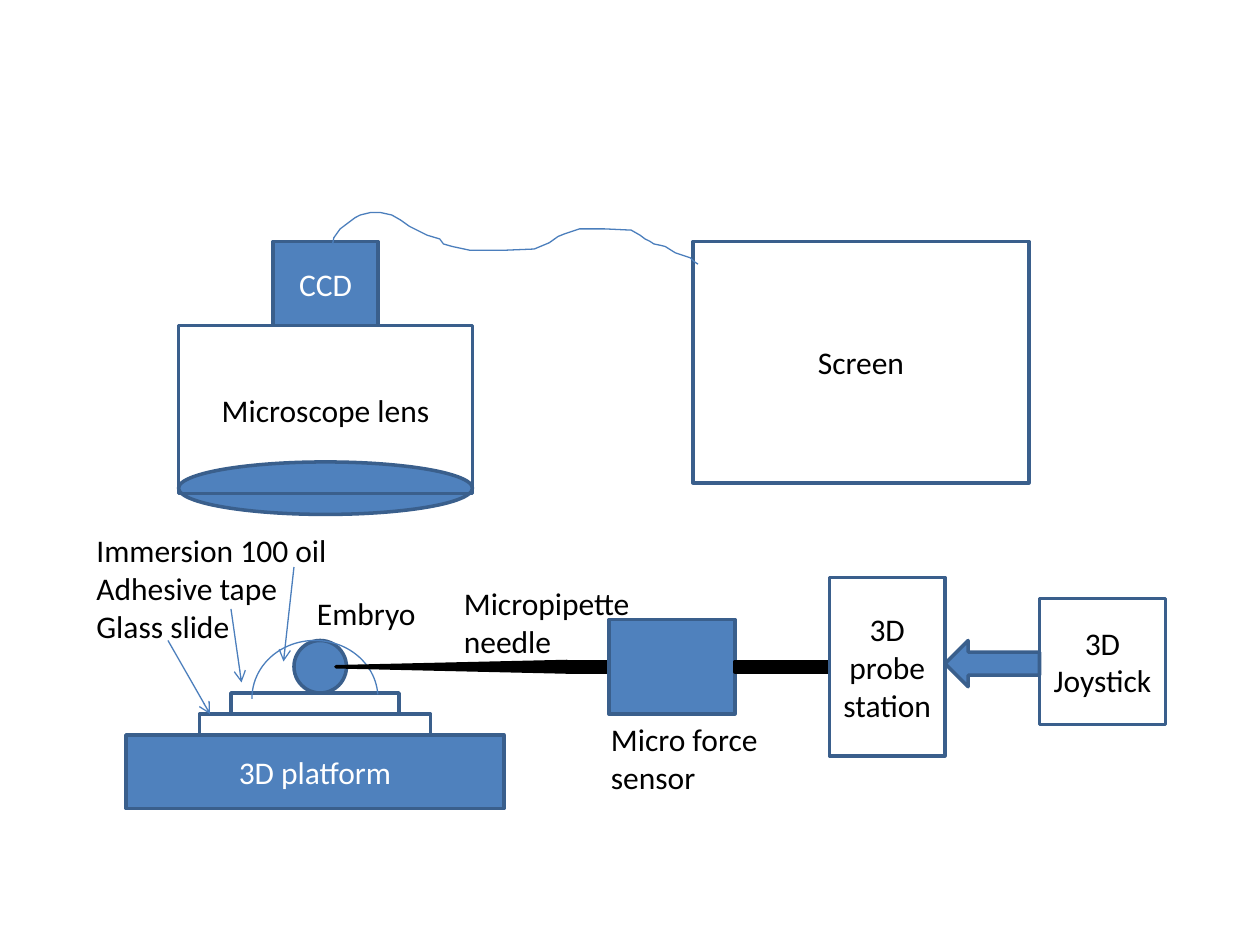
from lxml import etree
from pptx import Presentation
from pptx.dml.color import RGBColor
from pptx.enum.shapes import MSO_CONNECTOR, MSO_SHAPE
from pptx.enum.text import MSO_ANCHOR, MSO_AUTO_SIZE, PP_ALIGN
from pptx.oxml.ns import qn
from pptx.util import Inches, Pt

RECT, OVAL, ARC = MSO_SHAPE.RECTANGLE, MSO_SHAPE.OVAL, MSO_SHAPE.ARC
TRIANGLE, ARROW = MSO_SHAPE.ISOSCELES_TRIANGLE, MSO_SHAPE.RIGHT_ARROW
STRAIGHT = MSO_CONNECTOR.STRAIGHT
CENTER, MIDDLE, GROW = PP_ALIGN.CENTER, MSO_ANCHOR.MIDDLE, MSO_AUTO_SIZE.SHAPE_TO_FIT_TEXT
COLORS = {"blue": "4F81BD", "edge": "3A5F8C", "wire": "4B7EBC",
          "black": "000000", "white": "FFFFFF"}
FONT, SIZE = "Calibri", 18
CELL = Inches(1) / 12

CABLE = [(2.64, 1.94), (2.65, 1.89), (2.7, 1.82), (2.82, 1.73), (2.86, 1.71),
         (2.94, 1.69), (3.02, 1.69), (3.11, 1.71), (3.18, 1.75), (3.25, 1.8),
         (3.33, 1.84), (3.39, 1.87), (3.49, 1.9), (3.52, 1.94), (3.59, 1.96),
         (3.73, 1.99), (4.0, 1.99), (4.24, 1.98), (4.36, 1.93), (4.43, 1.88),
         (4.48, 1.86), (4.6, 1.82), (4.8, 1.82), (5.01, 1.83), (5.08, 1.87),
         (5.12, 1.9), (5.16, 1.92), (5.19, 1.94), (5.24, 1.95), (5.28, 1.96),
         (5.36, 2.01), (5.48, 2.05), (5.51, 2.08), (5.54, 2.1)]


def rgb(name):
    """Return the named colour."""
    return RGBColor.from_string(COLORS[name])


def grid(*cells):
    """Turn counts of grid cells into lengths."""
    return [round(c * CELL) for c in cells]


def style(sp, fill=None, line="edge", width=2):
    """Set the fill and outline of a shape."""
    sp.shadow.inherit = False
    if fill:
        sp.fill.solid()
        sp.fill.fore_color.rgb = rgb(fill)
    else:
        sp.fill.background()
    sp.line.color.rgb = rgb(line)
    sp.line.width = Pt(width)


def write(tf, text, color, align=None):
    """Write text and format its runs."""
    tf.text = text
    for p in tf.paragraphs:
        p.alignment = align
        for r in p.runs:
            r.font.name, r.font.size = FONT, Pt(SIZE)
            r.font.color.rgb = rgb(color)


def part(s, box, kind, col, row, w, h, text="", fill=None, line="edge", width=2):
    """Add a shape at a cell counted from the corner of the box."""
    sp = s.add_shape(kind, *grid(box[0] + col, box[1] + row, w, h))
    style(sp, fill, line, width)
    if text:
        sp.text_frame.vertical_anchor = MIDDLE
        write(sp.text_frame, text, "white" if fill else "black", CENTER)
    return sp


def label(s, box, col, row, w, h, text):
    """Add an unwrapped caption that fits its text."""
    tf = s.add_textbox(*grid(box[0] + col, box[1] + row, w, h)).text_frame
    tf.word_wrap = False
    tf.auto_size = GROW
    write(tf, text, "black")


def pointer(s, box, start, end):
    """Add a thin line with an open arrowhead at its end."""
    (x1, y1), (x2, y2) = start, end
    c = s.add_connector(STRAIGHT, *grid(box[0] + x1, box[1] + y1, box[0] + x2, box[1] + y2))
    c.line.color.rgb = rgb("wire")
    c.line.width = Pt(0.75)
    etree.SubElement(c.line._get_or_add_ln(), qn("a:tailEnd"), type="arrow")
    etree.SubElement(c._element.spPr, qn("a:effectLst"))


def stage(s, box):
    """Draw the platform, slide, tape and embryo under its oil drop."""
    part(s, box, RECT, 0, 9, 36, 7, "3D platform", "blue")
    part(s, box, RECT, 7, 7, 22, 2)
    part(s, box, RECT, 10, 5, 16, 2)
    part(s, box, OVAL, 16, 0, 5, 5, fill="blue")
    drop = part(s, box, ARC, 12, 0, 12, 11, line="wire", width=0.75)
    drop.adjustments[0], drop.adjustments[1] = 107.57, 213.88


def microscope(s, box):
    """Draw the lens body with the camera on top."""
    part(s, box, OVAL, 0, 21, 28, 5, fill="blue")
    part(s, box, RECT, 0, 8, 28, 16, "Microscope lens")
    part(s, box, RECT, 9, 0, 10, 8, "CCD", "blue")


def injector(s, box):
    """Draw the needle, force sensor, probe station and joystick."""
    needle = part(s, box, TRIANGLE, 10.5, -2.5, 1, 22, fill="black", line="black")
    needle.rotation = 270
    part(s, box, RECT, 22, 8, 4, 1, fill="black", line="black")
    part(s, box, RECT, 26, 4, 12, 9, fill="blue")
    part(s, box, RECT, 38, 8, 9, 1, fill="black", line="black")
    part(s, box, RECT, 47, 0, 11, 17, "3D probe station")
    part(s, box, ARROW, 58, 6, 9, 4.4, fill="blue").rotation = 180
    part(s, box, RECT, 67, 2, 12, 12, "3D Joystick")
    label(s, box, 25, 13, 16.5, 8.5, "Micro force\nsensor")
    label(s, box, 11, 0, 19, 8.5, "Micropipette\nneedle")


def display(s, box):
    """Draw the screen and the cable from the camera."""
    part(s, box, RECT, 0, 0, 32, 23, "Screen")
    left, top = grid(*box)
    points = [(left + Inches(x - 5.5), top + Inches(y - 1.92)) for x, y in CABLE]
    path_builder = s.build_freeform(*points[0])
    path_builder.add_line_segments(points[1:], close=False)
    style(path_builder.convert_to_shape(), line="wire", width=0.75)


def sample_labels(s, box):
    """Name the layers of the sample and point at them."""
    label(s, box, 0, 0, 25.6, 12.1, "Immersion 100 oil\nAdhesive tape\nGlass slide")
    label(s, box, 21, 6, 11.9, 4.8, "Embryo")
    for start, end in (((8, 11), (12, 18)), ((14, 8), (15, 15)), ((20, 4), (19, 13))):
        pointer(s, box, start, end)


def main():
    """Build the slide and save it."""
    prs = Presentation()
    prs.slide_width, prs.slide_height = Inches(10), Inches(7.5)
    slide = prs.slides.add_slide(prs.slide_layouts[6])
    s = slide.shapes.add_group_shape().shapes
    stage(s, (12, 61))
    microscope(s, (17, 23))
    injector(s, (32, 55))
    display(s, (66, 23))
    sample_labels(s, (8, 50))
    prs.save("out.pptx")


if __name__ == "__main__":
    main()
